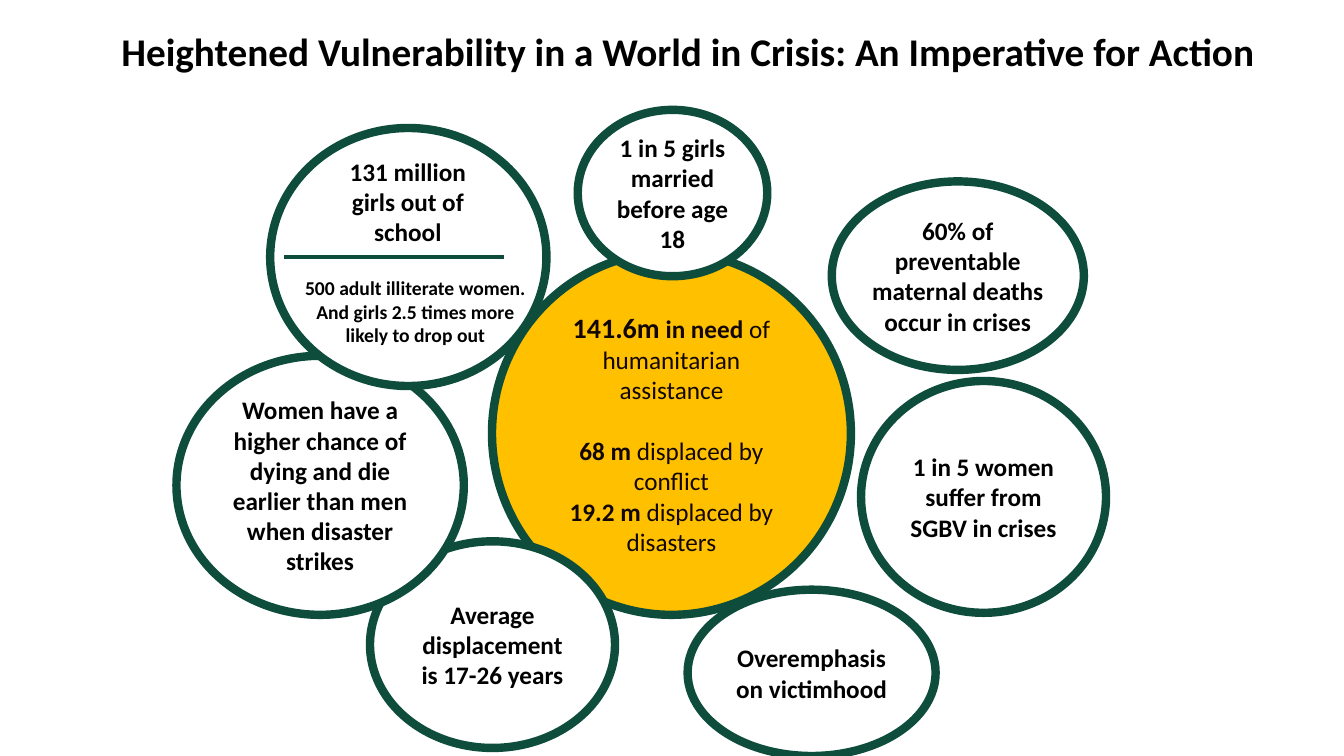
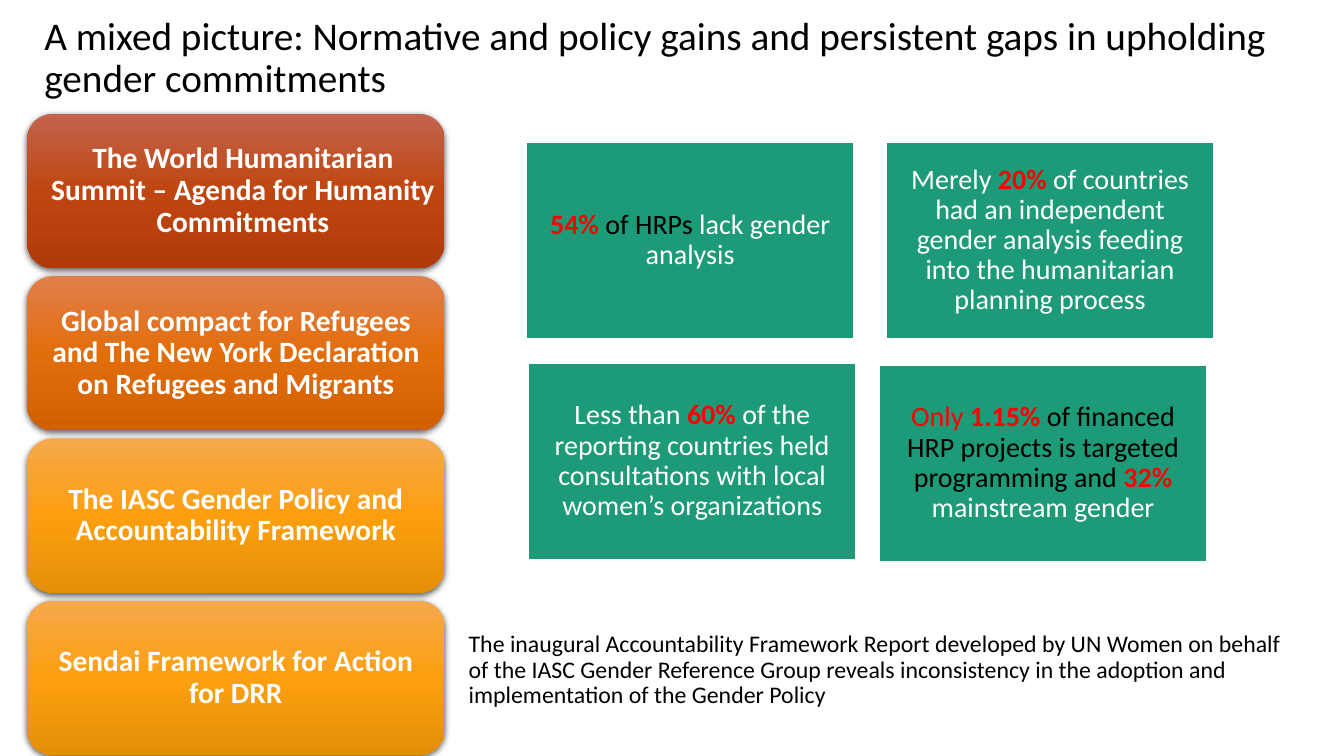
from dataclasses import dataclass, replace

from lxml.etree import SubElement
from pptx import Presentation
from pptx.dml.color import RGBColor
from pptx.enum.shapes import MSO_CONNECTOR, MSO_SHAPE
from pptx.enum.text import MSO_ANCHOR, PP_ALIGN
from pptx.oxml.ns import qn
from pptx.util import Inches, Pt


@dataclass(frozen=True)
class Theme:
    font: str = "Calibri"
    black: str = "000000"
    white: str = "FFFFFF"
    red: str = "FF0000"
    green: str = "0E4D3C"
    gold: str = "FFC000"
    brown: str = "120703"
    tile: str = "1D9A78"
    rust: tuple = ("C2634D", "BF4611", "B13B08")
    orange: tuple = ("E17F4C", "E26D0B", "D16001")
    amber: tuple = ("F5A84E", "FC9F0E", "E58F07")
    title_size: int = 28
    card_size: int = 21
    figure_size: int = 20
    bubble_size: int = 18
    note_size: int = 17
    detail_size: int = 14
    ring_width: float = 6
    rule_width: float = 2.25


THEME = Theme()


@dataclass(frozen=True)
class Style:
    size: int
    color: str = THEME.black
    bold: bool = False


@dataclass(frozen=True)
class Box:
    left: float
    top: float
    width: float
    height: float

    def lengths(self):
        return [Inches(value) for value in (self.left, self.top, self.width, self.height)]

    def inner(self, left, top, width, height):
        return Box(self.left + left, self.top + top, width, height)


BUBBLE = Style(THEME.bubble_size, bold=True)
CENTRE_PLAIN = Style(THEME.bubble_size, THEME.brown)
CENTRE_BOLD = replace(CENTRE_PLAIN, bold=True)
CENTRE_LARGE = replace(CENTRE_BOLD, size=THEME.figure_size)
CARD = Style(THEME.card_size, THEME.white, True)
TILE = Style(THEME.figure_size, THEME.white)
TILE_BLACK = replace(TILE, color=THEME.black)
TILE_RED = replace(TILE, color=THEME.red)
FIGURE = replace(TILE_RED, bold=True)


def color(value):
    return RGBColor.from_string(value)


def write(shape, paragraphs, align=PP_ALIGN.CENTER, anchor=MSO_ANCHOR.MIDDLE,
          spacing=1.0, insets=(0.1, 0.05, 0.1, 0.05)):
    frame = shape.text_frame
    frame.word_wrap = True
    frame.vertical_anchor = anchor
    (frame.margin_left, frame.margin_top,
     frame.margin_right, frame.margin_bottom) = [Inches(inset) for inset in insets]
    for index, runs in enumerate(paragraphs):
        paragraph = frame.add_paragraph() if index else frame.paragraphs[0]
        paragraph.alignment = align
        paragraph.line_spacing = spacing
        for text, style in runs:
            run = paragraph.add_run()
            run.text = text
            run.font.name = THEME.font
            run.font.size = Pt(style.size)
            run.font.bold = style.bold
            run.font.color.rgb = color(style.color)


def add_title_slide(presentation, text, box, align, bold=False):
    slide = presentation.slides.add_slide(presentation.slide_layouts[5])
    title = slide.shapes.title
    title.left, title.top, title.width, title.height = box.lengths()
    write(title, [[(text, Style(THEME.title_size, bold=bold))]], align, spacing=0.9)
    return slide


def add_text(slide, box, paragraphs, **options):
    write(slide.shapes.add_textbox(*box.lengths()), paragraphs,
          anchor=MSO_ANCHOR.TOP, **options)


def add_plain_shape(slide, kind, box, fill, line, line_width):
    shape = slide.shapes.add_shape(kind, *box.lengths())
    shape.shadow.inherit = False
    shape.fill.solid()
    shape.fill.fore_color.rgb = color(fill)
    shape.line.color.rgb = color(line)
    shape.line.width = Pt(line_width)
    return shape


def add_bubble(slide, box, text="", fill=THEME.white, side_inset=0.1):
    bubble = add_plain_shape(slide, MSO_SHAPE.OVAL, box, fill, THEME.green, THEME.ring_width)
    if text:
        paragraphs = [[(text, BUBBLE)]] if isinstance(text, str) else text
        write(bubble, paragraphs, insets=(side_inset, 0.05, side_inset, 0.05))
    return bubble


def add_centre_bubble(slide, box):
    bubble = add_bubble(slide, box, [
        [("141.6m", CENTRE_LARGE), (" in need ", CENTRE_BOLD),
         ("of humanitarian assistance", CENTRE_PLAIN)],
        [("68 m ", CENTRE_BOLD), ("displaced by conflict", CENTRE_PLAIN)],
        [("19.2 m ", CENTRE_BOLD), ("displaced by disasters", CENTRE_PLAIN)],
    ], THEME.gold)
    bubble.text_frame.paragraphs[1].space_before = Pt(22)


def add_school_bubble(slide, box):
    add_bubble(slide, box)
    add_text(slide, box.inner(0.49, 0.23, 1.75, 1.35),
             [[("131 million", BUBBLE)], [("girls out of school", BUBBLE)]])
    left, top, width, _ = box.inner(0.14, 1.28, 2.18, 0).lengths()
    rule = slide.shapes.add_connector(MSO_CONNECTOR.STRAIGHT, left, top, left + width, top)
    rule.line.color.rgb = color(THEME.green)
    rule.line.width = Pt(THEME.rule_width)
    SubElement(rule._element.spPr, qn("a:effectLst"))
    detail = "500 adult illiterate women. And girls 2.5 times more likely to drop out"
    add_text(slide, box.inner(0.14, 1.42, 2.6, 0.98),
             [[(detail, replace(BUBBLE, size=THEME.detail_size))]])


def add_card(slide, box, text, gradient, text_shift=0):
    card = slide.shapes.add_shape(MSO_SHAPE.ROUNDED_RECTANGLE, *box.lengths())
    card.fill.gradient()
    card.fill.gradient_angle = 270
    card.line.fill.background()
    card.shadow.inherit = False
    properties = card._element.spPr
    stops = properties.find(".//" + qn("a:gsLst"))
    for stop in list(stops):
        stops.remove(stop)
    for index, value in enumerate(gradient):
        stop = SubElement(stops, qn("a:gs"), pos=str(index * 50000))
        SubElement(stop, qn("a:srgbClr"), val=value)
    shadow = SubElement(properties.find(qn("a:effectLst")), qn("a:outerShdw"),
                        blurRad=str(Pt(4.5)), dist=str(Pt(1.5)), dir="5400000",
                        algn="ctr", rotWithShape="0")
    shade = SubElement(shadow, qn("a:srgbClr"), val=THEME.black)
    SubElement(shade, qn("a:alpha"), val="63000")
    write(card, [[(text, CARD)]], spacing=0.9,
          insets=(0.09 + text_shift, 0.04, 0.09 - text_shift, 0.04))


def add_card_column(slide, box):
    cards = [
        ("The World Humanitarian Summit – Agenda for Humanity Commitments", THEME.rust, 0.07),
        ("Global compact for Refugees and The New York Declaration on Refugees and Migrants",
         THEME.orange, 0),
        ("The IASC Gender Policy and Accountability Framework", THEME.amber, 0),
        ("Sendai Framework for Action for DRR", THEME.amber, 0),
    ]
    gap = 0.08
    height = (box.height - gap * (len(cards) - 1)) / len(cards)
    for index, card in enumerate(cards):
        add_card(slide, box.inner(0, index * (height + gap), box.width, height), *card)


def add_tiles(slide, box):
    tiles = [
        (0, 0, [("54% ", FIGURE), ("of HRPs ", TILE_BLACK), ("lack gender analysis", TILE)]),
        (3.57, 0, [("Merely ", TILE), ("20% ", FIGURE),
                   ("of countries had an independent gender analysis feeding into the "
                    "humanitarian planning process", TILE)]),
        (0.02, 2.19, [("Less than ", TILE), ("60% ", FIGURE),
                      ("of the reporting countries held consultations with local "
                       "women’s organizations", TILE)]),
        (3.5, 2.21, [("Only ", TILE_RED), ("1.15% ", FIGURE),
                     ("of financed HRP projects is targeted programming and ", TILE_BLACK),
                     ("32% ", FIGURE), ("mainstream gender", TILE)]),
    ]
    for left, top, runs in tiles:
        tile = add_plain_shape(slide, MSO_SHAPE.RECTANGLE, box.inner(left, top, 3.25, 1.95),
                               THEME.tile, THEME.white, 1)
        write(tile, [runs], spacing=0.9, insets=(0.08,) * 4)


def build_vulnerability_slide(presentation):
    slide = add_title_slide(
        presentation, "Heightened Vulnerability in a World in Crisis: An Imperative for Action",
        Box(1.07, 0.13, 11.5, 0.8), PP_ALIGN.CENTER, bold=True)
    add_bubble(slide, Box(8.54, 3.78, 2.43, 2.3), "1 in 5 women suffer from SGBV in crises")
    add_bubble(slide, Box(6.82, 5.85, 2.46, 1.65), "Overemphasis on victimhood")
    add_centre_bubble(slide, Box(4.88, 2.5, 3.56, 3.6))
    add_bubble(slide, Box(5.73, 1.09, 1.88, 1.65), "1 in 5 girls married before age 18")
    add_bubble(slide, Box(8.25, 1.8, 2.5, 1.87),
               "60% of preventable maternal deaths occur in crises", side_inset=0)
    add_bubble(slide, Box(3.67, 5.37, 2.43, 2.05), "Average displacement is 17-26 years")
    add_bubble(slide, Box(1.75, 3.53, 2.85, 2.57),
               "Women have a higher chance of dying and die earlier than men "
               "when disaster strikes")
    add_school_bubble(slide, Box(2.68, 1.27, 2.74, 2.56))


def build_policy_slide(presentation):
    slide = add_title_slide(
        presentation, "A mixed picture: Normative and policy gains and persistent gaps "
        "in upholding gender commitments", Box(0.34, 0.13, 12.78, 0.9), PP_ALIGN.LEFT)
    note = ("The inaugural Accountability Framework Report developed by UN Women on behalf "
            "of the IASC Gender Reference Group reveals inconsistency in the adoption and "
            "implementation of the Gender Policy")
    add_text(slide, Box(4.55, 6.22, 8.43, 0.95), [[(note, Style(THEME.note_size))]],
             align=PP_ALIGN.LEFT, spacing=0.9)
    add_card_column(slide, Box(0.27, 1.13, 4.14, 6.36))
    add_tiles(slide, Box(5.22, 1.41, 6.82, 4.15))


def main():
    presentation = Presentation()
    presentation.slide_width = Inches(13.33)
    presentation.slide_height = Inches(7.5)
    build_vulnerability_slide(presentation)
    build_policy_slide(presentation)
    presentation.save("out.pptx")


if __name__ == "__main__":
    main()
